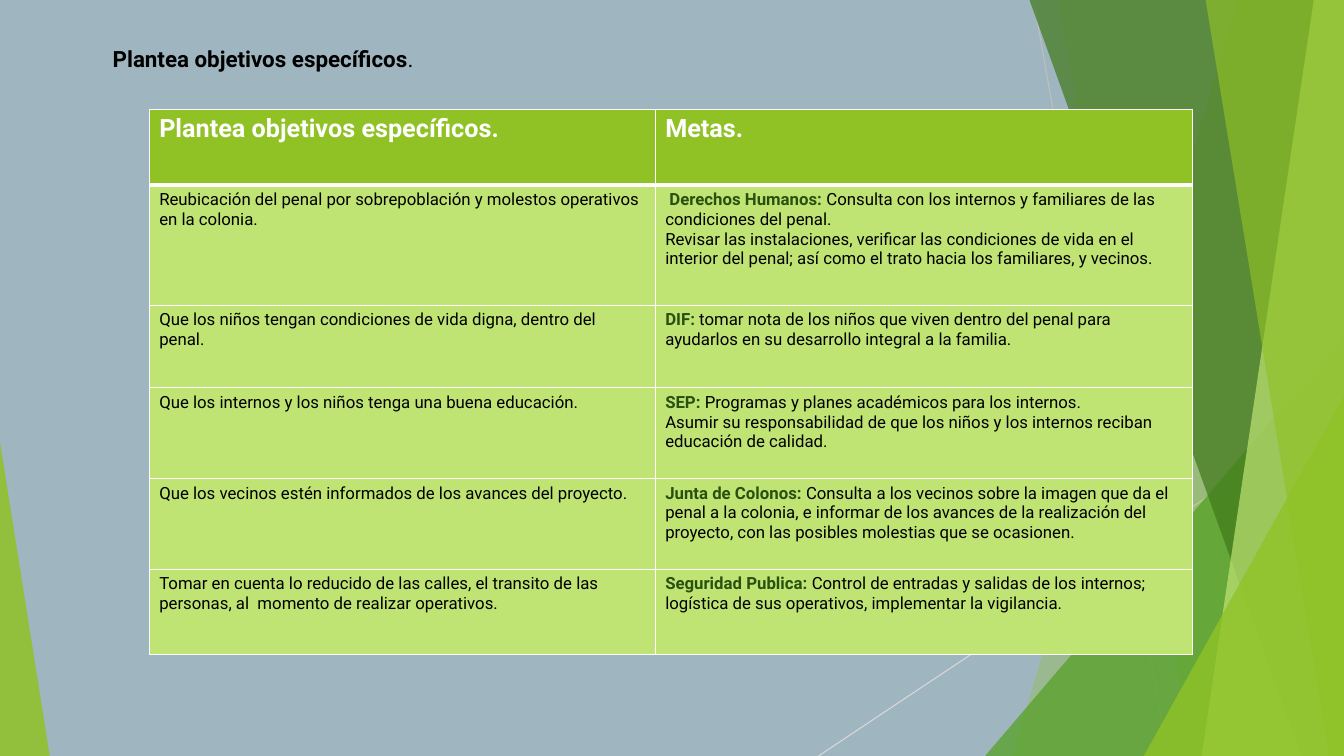
import pptx
import pptx.util
import pptx.dml.color
import pptx.enum.shapes
import pptx.oxml
import pptx.oxml.ns

BACKGROUND = pptx.dml.color.RGBColor(0x9F, 0xB6, 0xC0)
LIME = pptx.dml.color.RGBColor(0x90, 0xC2, 0x26)
GREEN = pptx.dml.color.RGBColor(0x54, 0xA0, 0x21)
FOREST = pptx.dml.color.RGBColor(0x3F, 0x78, 0x19)
PALE_LIME = pptx.dml.color.RGBColor(0xC0, 0xE4, 0x74)
LABEL_GREEN = pptx.dml.color.RGBColor(0x2A, 0x50, 0x10)
GRAY = pptx.dml.color.RGBColor(0xBF, 0xBF, 0xBF)
LIGHT_GRAY = pptx.dml.color.RGBColor(0xD9, 0xD9, 0xD9)
WHITE = pptx.dml.color.RGBColor(0xFF, 0xFF, 0xFF)
BLACK = pptx.dml.color.RGBColor(0, 0, 0)

HEADERS = ["Plantea objetivos específicos.", "Metas."]
GOALS = [
    ("Reubicación del penal por sobrepoblación y molestos operativos en la colonia.",
     " Derechos Humanos: ",
     ["Consulta con los internos y familiares de las condiciones del penal.",
      "Revisar las instalaciones, verificar las condiciones de vida en el interior del penal; "
      "así como el trato hacia los familiares, y vecinos."]),
    ("Que los niños tengan condiciones de vida digna, dentro del penal.",
     "DIF: ",
     ["tomar nota de los niños que viven dentro del penal para ayudarlos en su desarrollo "
      "integral a la familia."]),
    ("Que los internos y los niños tenga una buena educación.",
     "SEP: ",
     ["Programas y planes académicos para los internos.",
      "Asumir su responsabilidad de que los niños y los internos reciban educación de calidad."]),
    ("Que los vecinos estén informados de los avances del proyecto.",
     "Junta de Colonos: ",
     ["Consulta a los vecinos sobre la imagen que da el penal a la colonia, e informar de los "
      "avances de la realización del proyecto, con las posibles molestias que se ocasionen."]),
    ("Tomar en cuenta lo reducido de las calles, el transito de las personas, al  momento de "
     "realizar operativos.",
     "Seguridad Publica: ",
     ["Control de entradas y salidas de los internos; logística de sus operativos, implementar "
      "la vigilancia."]),
]


class SlideBuilder:
    """Draws styled elements on one slide, with lengths in percent of its size."""

    font_name = "Roboto"

    def __init__(self, presentation):
        self.width = presentation.slide_width
        self.height = presentation.slide_height
        self.slide = presentation.slides.add_slide(presentation.slide_layouts[6])
        self.slide.background.fill.solid()
        self.slide.background.fill.fore_color.rgb = BACKGROUND

    def across(self, percent):
        return round(self.width * percent / 100)

    def down(self, percent):
        return round(self.height * percent / 100)

    def paint(self, shape, color, opacity):
        shape.shadow.inherit = False
        shape.line.fill.background()
        shape.fill.solid()
        shape.fill.fore_color.rgb = color
        color_element = shape.fill._xPr.find(".//" + pptx.oxml.ns.qn("a:srgbClr"))
        alpha = color_element.makeelement(pptx.oxml.ns.qn("a:alpha"), {"val": str(opacity * 1000)})
        color_element.append(alpha)

    def line(self, start, end, color):
        connector = self.slide.shapes.add_connector(
            pptx.enum.shapes.MSO_CONNECTOR.STRAIGHT,
            self.across(start[0]), self.down(start[1]), self.across(end[0]), self.down(end[1]))
        connector.line.color.rgb = color
        connector.line.width = pptx.util.Pt(0.75)
        properties = connector._element.spPr
        properties.append(properties.makeelement(pptx.oxml.ns.qn("a:effectLst"), {}))

    def right_band(self, top_left, bottom_left, color, opacity):
        builder = self.slide.shapes.build_freeform(self.across(top_left), 0)
        corners = [(100, 0), (100, 100), (bottom_left, 100)]
        builder.add_line_segments([(self.across(x), self.down(y)) for x, y in corners])
        self.paint(builder.convert_to_shape(), color, opacity)

    def bottom_triangle(self, left, top, width, apex, color, opacity):
        shape = self.slide.shapes.add_shape(
            pptx.enum.shapes.MSO_SHAPE.ISOSCELES_TRIANGLE,
            self.across(left), self.down(top), self.across(width), self.down(100 - top))
        shape.adjustments[0] = apex
        self.paint(shape, color, opacity)

    def run(self, paragraph, text, size, color=BLACK, bold=False):
        run = paragraph.add_run()
        run.text = text
        run.font.name = self.font_name
        run.font.size = pptx.util.Pt(size)
        run.font.bold = bold
        run.font.color.rgb = color

    def title(self, left, top, width, height, text, ending):
        box = self.slide.shapes.add_textbox(
            self.across(left), self.down(top), self.across(width), self.down(height))
        box.text_frame.word_wrap = True
        paragraph = box.text_frame.paragraphs[0]
        self.run(paragraph, text, 16, bold=True)
        self.run(paragraph, ending, 16)

    def table(self, left, top, column_widths, row_heights):
        frame = self.slide.shapes.add_table(
            len(row_heights), len(column_widths), self.across(left), self.down(top),
            self.across(sum(column_widths)), self.down(sum(row_heights)))
        table = frame.table
        table.horz_banding = False
        for column, width in zip(table.columns, column_widths):
            column.width = self.across(width)
        for row_number, height in enumerate(row_heights):
            table.rows[row_number].height = self.down(height)
            for cell in table.rows[row_number].cells:
                self.style_cell(cell, row_number)
        return table

    def style_cell(self, cell, row_number):
        cell.fill.solid()
        cell.fill.fore_color.rgb = PALE_LIME if row_number else LIME
        weights = {"lnL": 1, "lnR": 1,
                   "lnT": 3 if row_number == 1 else 1,
                   "lnB": 3 if row_number == 0 else 1}
        properties = cell._tc.get_or_add_tcPr()
        for position, (side, weight) in enumerate(weights.items()):
            properties.insert(position, pptx.oxml.parse_xml(
                f'<a:{side} {pptx.oxml.ns.nsdecls("a")} w="{pptx.util.Pt(weight)}">'
                f'<a:solidFill><a:srgbClr val="{WHITE}"/></a:solidFill></a:{side}>'))

    def fill_goal(self, goal_cell, target_cell, goal, label, targets):
        self.run(goal_cell.text_frame.paragraphs[0], goal, 12)
        text_frame = target_cell.text_frame
        self.run(text_frame.paragraphs[0], label, 12, LABEL_GREEN, True)
        self.run(text_frame.paragraphs[0], targets[0], 12)
        for target in targets[1:]:
            self.run(text_frame.add_paragraph(), target, 12)


def main():
    presentation = pptx.Presentation()
    presentation.slide_width = pptx.util.Inches(13.33)
    presentation.slide_height = pptx.util.Inches(7.5)
    builder = SlideBuilder(presentation)

    builder.line((76.9, 0), (86.9, 100), GRAY)
    builder.line((100, 53.7), (60.9, 100), LIGHT_GRAY)
    builder.right_band(92.1, 75.3, LIME, 30)
    builder.right_band(78.75, 88.75, LIME, 20)
    builder.bottom_triangle(73.3, 44.4, 26.7, 1, GREEN, 72)
    builder.right_band(76.6, 96.85, FOREST, 70)
    builder.right_band(97.75, 89.4, PALE_LIME, 70)
    builder.right_band(89.7, 98.9, LIME, 65)
    builder.bottom_triangle(85.1, 52.4, 14.9, 1, LIME, 80)
    builder.bottom_triangle(0, 58.5, 3.7, 0, LIME, 85)

    builder.title(7.65, 5.33, 86.65, 12.1, "Plantea objetivos específicos", ".")

    table = builder.table(11.1, 14.5, [37.65, 40], [10, 15.87, 10.93, 12, 12, 11.33])
    for column_number, header in enumerate(HEADERS):
        paragraph = table.cell(0, column_number).text_frame.paragraphs[0]
        builder.run(paragraph, header, 18, WHITE, True)
    for row_number, goal in enumerate(GOALS, start=1):
        builder.fill_goal(table.cell(row_number, 0), table.cell(row_number, 1), *goal)

    presentation.save("out.pptx")


if __name__ == "__main__":
    main()
